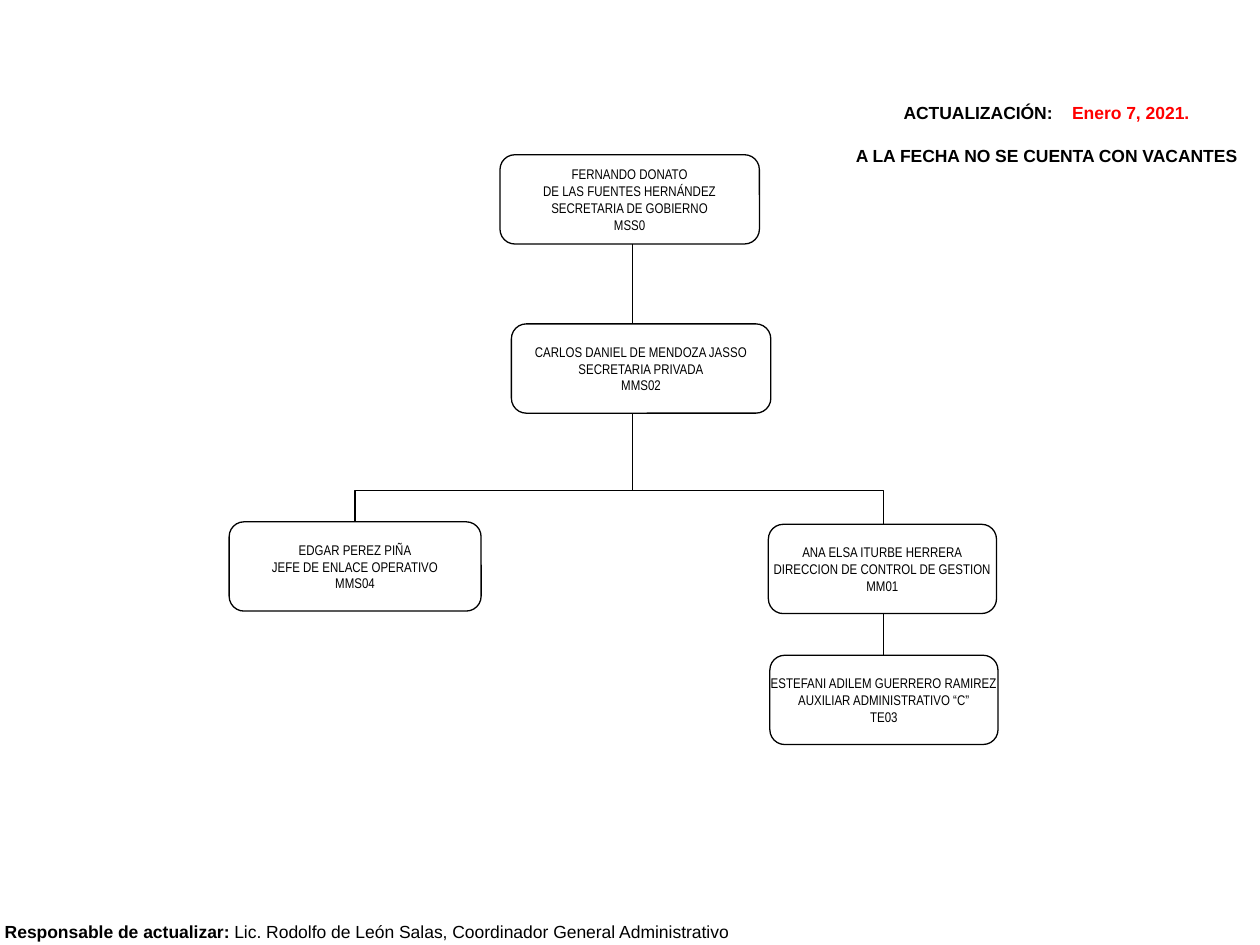
from lxml.etree import SubElement
from pptx import Presentation
from pptx.dml.color import RGBColor
from pptx.enum.shapes import MSO_CONNECTOR, MSO_SHAPE
from pptx.enum.text import MSO_ANCHOR, PP_ALIGN
from pptx.oxml.ns import qn
from pptx.util import Cm, Pt

COLORS = {"ink": "000000", "paper": "FFFFFF", "date": "FF0000"}
LABEL = {"name": "Arial", "size": Pt(10), "bold": True}
ROLE = {"name": "Arial Narrow", "size": Pt(8), "bold": False}


def write(para, text, style, color="ink"):
    """Add a centred span of text to the paragraph and return the span."""
    para.alignment = PP_ALIGN.CENTER
    span = para.add_run()
    span.text = text
    for key, value in style.items():
        setattr(span.font, key, value)
    span.font.color.rgb = RGBColor.from_string(COLORS[color])
    return span


def connect(kind, x1, y1, x2, y2):
    """Draw a thin connector without a shadow."""
    line = page.shapes.add_connector(kind, Cm(x1), Cm(y1), Cm(x2), Cm(y2))
    line.line.width = Pt(0.75)
    line.line.color.rgb = RGBColor.from_string(COLORS["ink"])
    SubElement(line._element.spPr, qn("a:effectLst"))
    return line


deck = Presentation()
deck.slide_width, deck.slide_height = Cm(25.4), Cm(19.05)
page = deck.slides.add_slide(deck.slide_layouts[6])

# Footer and update notice
footer = page.shapes.add_textbox(Cm(-0.51), Cm(18.44), Cm(15.8), Cm(0.69)).text_frame
notice = page.shapes.add_textbox(Cm(16.74), Cm(1.93), Cm(8.71), Cm(1.55)).text_frame
footer.word_wrap = notice.word_wrap = True

para = footer.paragraphs[0]
write(para, "Responsable de actualizar: ", LABEL)
write(para, "Lic. Rodolfo de León Salas, Coordinador General Administrativo",
      {**LABEL, "bold": False})

para = notice.paragraphs[0]
write(para, "ACTUALIZACIÓN:", LABEL)
gap = write(para, " ", LABEL)
gap.font._element.set("spc", "830")  # widens the gap before the date
write(para, "Enero 7, 2021.", LABEL, "date")
para = notice.add_paragraph()
para.space_before = Pt(12.5)
write(para, "A LA FECHA NO SE CUENTA CON VACANTES", LABEL)

# Lines of command, behind the boxes
connect(MSO_CONNECTOR.STRAIGHT, 12.75, 4.8, 12.75, 9.9)
branch = connect(MSO_CONNECTOR.ELBOW, 13.83, 6.54, 11.14, 17.19)
properties = branch._element.spPr
properties.find(qn("a:xfrm")).set("rot", str(270 * 60000))
guides = properties.find(qn("a:prstGeom")).find(qn("a:avLst"))
SubElement(guides, qn("a:gd"), name="adj1", fmla="val -23700")

# Posts: left, top, width, lines of text
posts = [
    (10.08, 3.12, 5.23, ["FERNANDO DONATO", "DE LAS FUENTES HERNÁNDEZ",
                         "SECRETARIA DE GOBIERNO", "MSS0"]),
    (10.31, 6.53, 5.23, ["CARLOS DANIEL DE MENDOZA JASSO", "SECRETARIA PRIVADA",
                         "MMS02"]),
    (4.62, 10.52, 5.08, ["EDGAR PEREZ PIÑA", "JEFE DE ENLACE OPERATIVO", "MMS04"]),
    (15.52, 13.21, 4.6, ["ESTEFANI ADILEM GUERRERO RAMIREZ",
                         "AUXILIAR ADMINISTRATIVO “C”", "TE03"]),
    (15.49, 10.57, 4.6, ["ANA ELSA ITURBE HERRERA",
                         "DIRECCION DE CONTROL DE GESTION", "MM01"]),
]
frame_format = {"word_wrap": False, "vertical_anchor": MSO_ANCHOR.MIDDLE,
                "margin_left": 0, "margin_top": 0,
                "margin_right": 0, "margin_bottom": 0}
for left, top, width, lines in posts:
    box = page.shapes.add_shape(MSO_SHAPE.ROUNDED_RECTANGLE,
                                Cm(left), Cm(top), Cm(width), Cm(1.8))
    box.shadow.inherit = False
    box.fill.solid()
    box.fill.fore_color.rgb = RGBColor.from_string(COLORS["paper"])
    box.line.width = Pt(0.75)
    box.line.color.rgb = RGBColor.from_string(COLORS["ink"])
    frame = box.text_frame
    for key, value in frame_format.items():
        setattr(frame, key, value)
    for index, text in enumerate(lines):
        para = frame.add_paragraph() if index else frame.paragraphs[0]
        write(para, text, ROLE)

deck.save("out.pptx")
